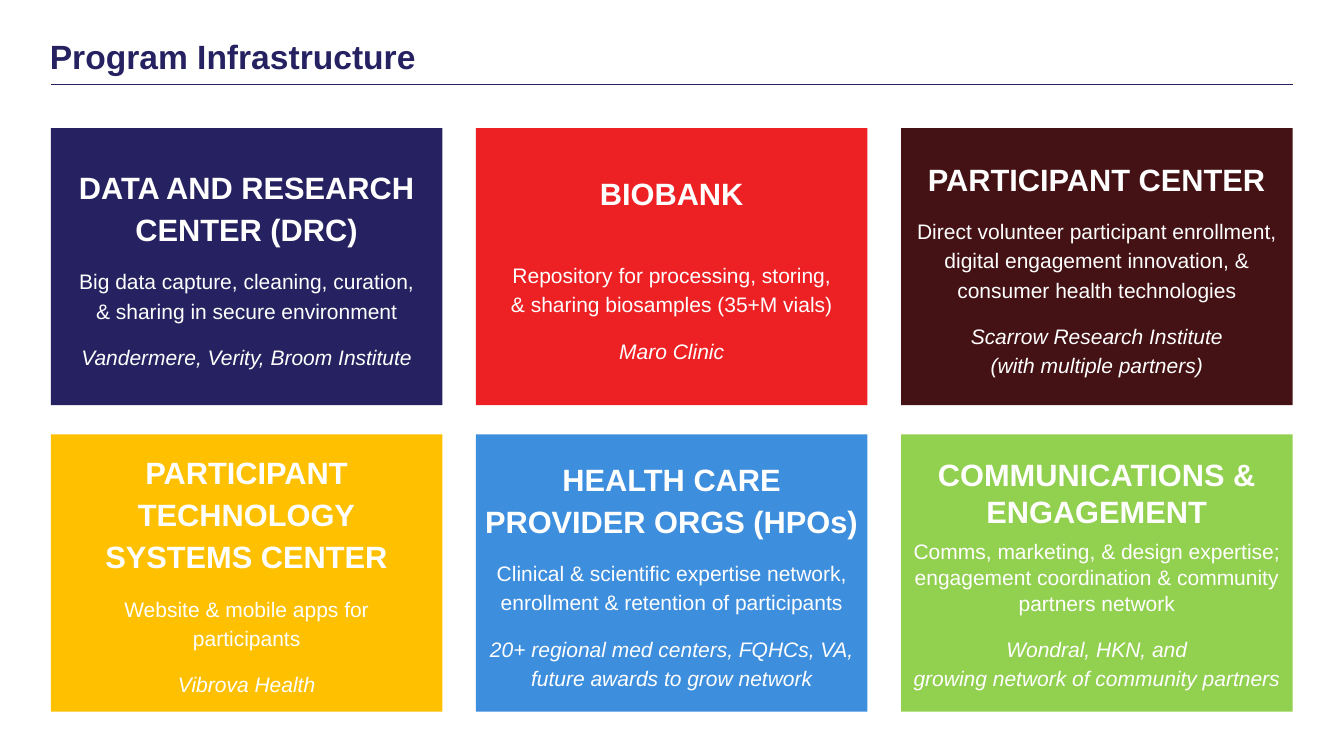
"""Build the Program Infrastructure slide: a title, a rule and a grid of six cards."""
from dataclasses import dataclass

from lxml.etree import SubElement
from pptx import Presentation
from pptx.dml.color import RGBColor as Rgb
from pptx.enum.shapes import MSO_CONNECTOR as Conn, MSO_SHAPE as Kind
from pptx.enum.text import MSO_ANCHOR as Anchor, PP_ALIGN as Align
from pptx.oxml.ns import qn
from pptx.util import Inches, Pt

WIDE, HIGH = 26.67, 15
LEFT, TOP = 1.01, 2.54
CARD_W, CARD_H = 7.77, 5.5
GAP_X, GAP_Y = 0.665, 0.58
SPAN = 3 * CARD_W + 2 * GAP_X
FONT = "Arial"
HUES = {
    "navy": "262261", "red": "ED2024", "maroon": "441114",
    "gold": "FFC000", "blue": "3E8EDE", "green": "92D050", "white": "FFFFFF",
}


@dataclass(frozen=True)
class Style:
    size: float
    pitch: float
    before: float = 0
    bold: bool = False
    slant: bool = False
    hue: str = "white"
    align: Align = Align.CENTER


@dataclass(frozen=True)
class Card:
    col: int
    row: int
    hue: str
    head: str
    body: str
    team: str
    head_pitch: float = 60
    body_pitch: float = 42
    gap: float = 24


TITLE = Style(48, 48, bold=True, hue="navy", align=Align.LEFT)
CARDS = [
    Card(0, 0, "navy", "DATA AND RESEARCH\nCENTER (DRC)",
         "Big data capture, cleaning, curation,\n& sharing in secure environment",
         "Vandermere, Verity, Broom Institute"),
    Card(1, 0, "red", "BIOBANK",
         "Repository for processing, storing,\n& sharing biosamples (35+M vials)",
         "Maro Clinic", gap=66),
    Card(2, 0, "maroon", "PARTICIPANT CENTER",
         "Direct volunteer participant enrollment,\ndigital engagement innovation, &\n"
         "consumer health technologies",
         "Scarrow Research Institute\n(with multiple partners)"),
    Card(0, 1, "gold", "PARTICIPANT\nTECHNOLOGY\nSYSTEMS CENTER",
         "Website & mobile apps for\nparticipants", "Vibrova Health"),
    Card(1, 1, "blue", "HEALTH CARE\nPROVIDER ORGS (HPOs)",
         "Clinical & scientific expertise network,\nenrollment & retention of participants",
         "20+ regional med centers, FQHCs, VA,\nfuture awards to grow network"),
    Card(2, 1, "green", "COMMUNICATIONS &\nENGAGEMENT",
         "Comms, marketing, & design expertise;\nengagement coordination & community\n"
         "partners network",
         "Wondral, HKN, and\ngrowing network of community partners",
         head_pitch=53, body_pitch=37, gap=12),
]


def tint(name: str) -> Rgb:
    """Return the named colour."""
    return Rgb.from_string(HUES[name])


def clear(frame, anchor: Anchor, wrap: bool) -> None:
    """Set the anchor and wrapping of a frame and remove its margins."""
    frame.margin_left = frame.margin_right = frame.margin_top = frame.margin_bottom = 0
    frame.vertical_anchor = anchor
    frame.word_wrap = wrap


def write(para, text: str, style: Style) -> None:
    """Fill a paragraph with one run per line of text."""
    para.alignment = style.align
    para.line_spacing = Pt(style.pitch)
    para.space_before = Pt(style.before)
    for num, line in enumerate(text.split("\n")):
        if num:
            para.add_line_break()
        run = para.add_run()
        run.text = line
        font = run.font
        font.name, font.size = FONT, Pt(style.size)
        font.bold, font.italic = style.bold, style.slant
        font.color.rgb = tint(style.hue)


def draw_title(slide, text: str) -> None:
    """Draw the title and the rule below it."""
    base = 1.67
    box = slide.shapes.add_textbox(Inches(0.99), Inches(0.84), Inches(SPAN), Inches(0.83))
    clear(box.text_frame, Anchor.TOP, True)
    write(box.text_frame.paragraphs[0], text, TITLE)
    rule = slide.shapes.add_connector(
        Conn.STRAIGHT, Inches(LEFT), Inches(base), Inches(LEFT + SPAN), Inches(base))
    rule.line.color.rgb = tint("navy")
    rule.line.width = Pt(0.5)
    SubElement(rule._element.spPr, qn("a:effectLst"))


def draw_card(slide, card: Card) -> None:
    """Draw one card in its grid cell."""
    left = LEFT + card.col * (CARD_W + GAP_X)
    top = TOP + card.row * (CARD_H + GAP_Y)
    shape = slide.shapes.add_shape(
        Kind.RECTANGLE, Inches(left), Inches(top), Inches(CARD_W), Inches(CARD_H))
    shape.shadow.inherit = False
    shape.fill.solid()
    shape.fill.fore_color.rgb = tint(card.hue)
    shape.line.fill.background()
    frame = shape.text_frame
    clear(frame, Anchor.MIDDLE, False)
    write(frame.paragraphs[0], card.head, Style(44, card.head_pitch, bold=True))
    write(frame.add_paragraph(), card.body, Style(30, card.body_pitch, card.gap))
    write(frame.add_paragraph(), card.team, Style(30, 42, 24, slant=True))


def main() -> None:
    """Build and save the deck."""
    deck = Presentation()
    deck.slide_width, deck.slide_height = Inches(WIDE), Inches(HIGH)
    slide = deck.slides.add_slide(deck.slide_layouts[6])
    draw_title(slide, "Program Infrastructure")
    for card in CARDS:
        draw_card(slide, card)
    deck.save("out.pptx")


if __name__ == "__main__":
    main()
